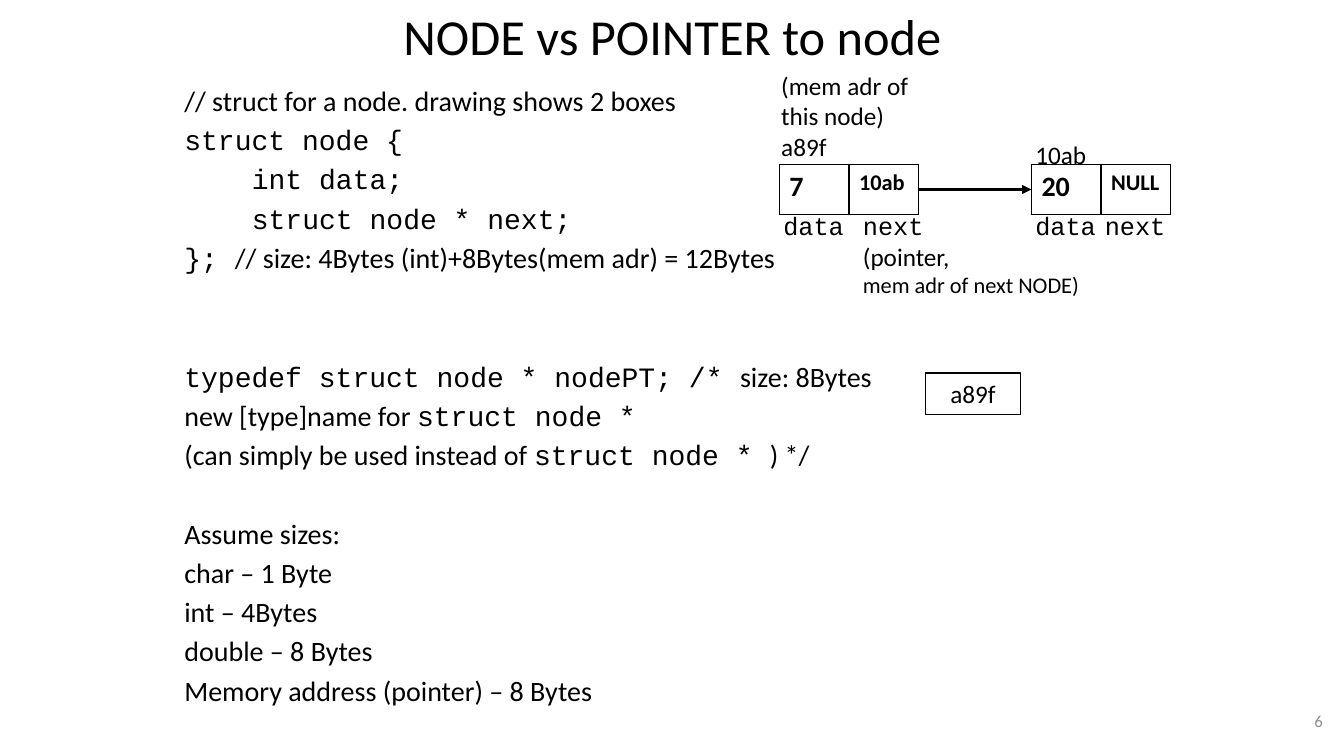
from dataclasses import dataclass
from lxml.etree import SubElement
from pptx import Presentation
from pptx.dml.color import RGBColor
from pptx.enum.shapes import MSO_CONNECTOR, MSO_SHAPE
from pptx.enum.text import MSO_ANCHOR, PP_ALIGN
from pptx.oxml.ns import qn
from pptx.util import Emu, Pt


@dataclass(frozen=True)
class Theme:
    sans: str = "Calibri"
    mono: str = "Courier New"
    ink: RGBColor = RGBColor(0, 0, 0)
    paper: RGBColor = RGBColor(255, 255, 255)
    gray: RGBColor = RGBColor(0x8C, 0x8C, 0x8C)
    title: int = 36
    body: int = 20
    label: int = 18
    note: int = 16
    foot: int = 12


T = Theme()
SANS, MONO = T.sans, T.mono
CELL_W, CELL_H, NODE_Y = 69, 50, 163
TAB = 67  # four code characters

# Each line: space before (pt), indent (px), then text and font pairs
LINES = [
    (0, 0, [("// struct for a node. drawing shows 2 boxes", SANS)]),
    (4, 0, [("struct node {", MONO)]),
    (4, TAB, [("int data;", MONO)]),
    (4, TAB, [("struct node * next;", MONO)]),
    (4, 0, [("}; ", MONO),
            ("// size: 4Bytes (int)+8Bytes(mem adr) = 12Bytes", SANS)]),
    (61, 0, [("typedef struct node * nodePT; /* ", MONO),
             ("size: 8Bytes", SANS)]),
    (4, 0, [("new [type]name for ", SANS), ("struct node *", MONO)]),
    (4, 0, [("(can simply be used instead of ", SANS),
            ("struct node * ", MONO), (") */", SANS)]),
    (32, 0, [("Assume sizes:", SANS)]),
    (4, 0, [("char – 1 Byte", SANS)]),
    (4, 0, [("int – 4Bytes", SANS)]),
    (4, 0, [("double – 8 Bytes", SANS)]),
    (4, 0, [("Memory address (pointer) – 8 Bytes", SANS)]),
]


def px(n):
    return Emu(n * 9144)


def style(font, size, name=SANS, color=T.ink, bold=False):
    font.size, font.name, font.bold = Pt(size), name, bold
    font.color.rgb = color


def write(frame, rows, align=PP_ALIGN.LEFT, color=T.ink, bold=False):
    """Fill a frame with rows of (text, size, font name)."""
    for i, (text, size, name) in enumerate(rows):
        para = frame.add_paragraph() if i else frame.paragraphs[0]
        para.text, para.alignment = text, align
        style(para.font, size, name, color, bold)


def add_text(slide, box, rows, anchor=MSO_ANCHOR.TOP, **look):
    frame = slide.shapes.add_textbox(*map(px, box)).text_frame
    frame.word_wrap, frame.vertical_anchor = True, anchor
    write(frame, rows, **look)


def add_title(slide, text):
    title = slide.shapes.title
    title.left, title.top, title.width, title.height = map(px, (217, 8, 900, 54))
    title.text_frame.vertical_anchor = MSO_ANCHOR.MIDDLE
    write(title.text_frame, [(text, T.title, SANS)], PP_ALIGN.CENTER)


def add_code(slide, box, lines):
    frame = slide.shapes.add_textbox(*map(px, box)).text_frame
    frame.word_wrap = True
    for i, (gap, indent, parts) in enumerate(lines):
        para = frame.add_paragraph() if i else frame.paragraphs[0]
        para.space_before, para.line_spacing = Pt(gap), Pt(24)
        if indent:
            para._p.get_or_add_pPr().set("marL", str(px(indent)))
        for text, name in parts:
            run = para.add_run()
            run.text = text
            if len(parts) > 1:
                style(run.font, T.body, name)
        if len(parts) == 1:
            style(para.font, T.body, parts[0][1])


def add_edge(cell):
    props = cell._tc.get_or_add_tcPr()
    for i, side in enumerate(("lnL", "lnR", "lnT", "lnB")):
        line = props.makeelement(qn("a:" + side), {"w": str(Pt(1))})
        fill = SubElement(line, qn("a:solidFill"))
        SubElement(fill, qn("a:srgbClr"), val=str(T.ink))
        props.insert(i, line)


def add_node(slide, x, data, link):
    box = (x, NODE_Y, 2 * CELL_W, CELL_H)
    table = slide.shapes.add_table(1, 2, *map(px, box)).table
    table.first_row = table.horz_banding = False
    for i, (text, size) in enumerate(((data, T.body), (link, T.note))):
        table.columns[i].width = px(CELL_W)
        cell = table.cell(0, i)
        cell.fill.background()
        write(cell.text_frame, [(text, size, SANS)], bold=True)
        add_edge(cell)


def add_box(slide, box, text):
    rect = slide.shapes.add_shape(MSO_SHAPE.RECTANGLE, *map(px, box))
    rect.shadow.inherit = False
    rect.fill.solid()
    rect.fill.fore_color.rgb = T.paper
    rect.line.color.rgb, rect.line.width = T.ink, Pt(1)
    rect.text_frame.vertical_anchor = MSO_ANCHOR.MIDDLE
    write(rect.text_frame, [(text, T.label, SANS)], PP_ALIGN.CENTER)


def add_arrow(slide, x1, x2, y):
    line = slide.shapes.add_connector(
        MSO_CONNECTOR.STRAIGHT, px(x1), px(y), px(x2), px(y))
    line.line.color.rgb, line.line.width = T.ink, Pt(2.25)
    SubElement(line.line._get_or_add_ln(), qn("a:tailEnd"), type="triangle")
    SubElement(line._element.spPr, qn("a:effectLst"))


def main():
    deck = Presentation()
    deck.slide_width, deck.slide_height = px(1333), px(750)
    slide = deck.slides.add_slide(deck.slide_layouts[5])

    # Title, code and page number
    add_title(slide, "NODE vs POINTER to node")
    add_code(slide, (173, 78, 986, 657), LINES)
    add_text(slide, (1011, 695, 311, 40), [("6", T.foot, SANS)],
             MSO_ANCHOR.MIDDLE, align=PP_ALIGN.RIGHT, color=T.gray)

    # Two linked nodes
    one, two = 773, 1023
    add_node(slide, one, "7", "10ab")
    add_node(slide, two, "20", "NULL")
    add_arrow(slide, one + 2 * CELL_W, two, NODE_Y + CELL_H // 2)

    # Field names below the nodes
    data, link = ("data", T.label, MONO), ("next", T.label, MONO)
    for x, row in ((767, data), (1017, data), (1086, link)):
        add_text(slide, (x, 204, 81, 40), [row])
    add_text(slide, (846, 204, 238, 98),
             [link, ("(pointer,", T.label, SANS),
              ("mem adr of next NODE)", T.note, SANS)])

    # Addresses above the nodes, and the pointer variable
    add_text(slide, (765, 65, 165, 101),
             [("(mem adr of this node)", T.label, SANS),
              ("a89f", T.label, SANS)])
    add_text(slide, (1017, 133, 71, 40), [("10ab", T.label, SANS)])
    add_box(slide, (918, 370, 94, 41), "a89f")

    deck.save("out.pptx")


if __name__ == "__main__":
    main()
